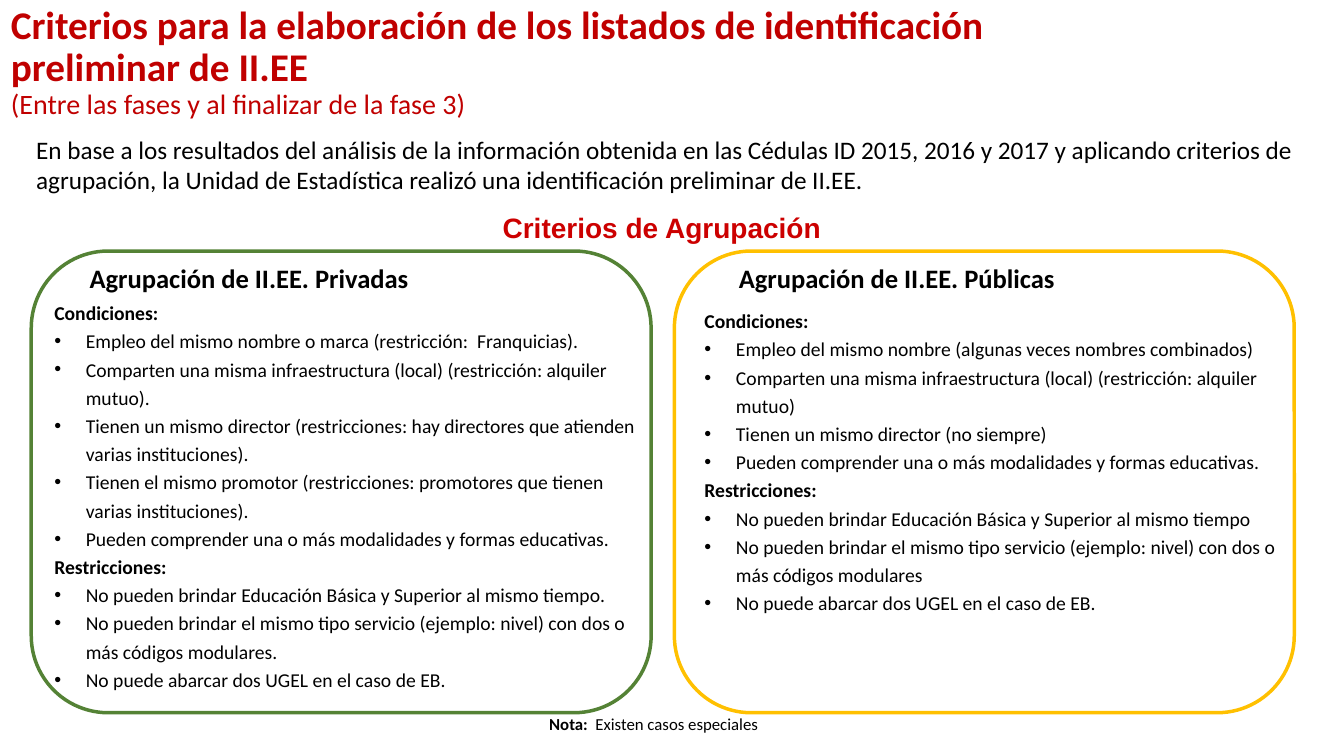
from lxml.etree import SubElement
from pptx import Presentation
from pptx.dml.color import RGBColor
from pptx.enum.shapes import MSO_SHAPE as Preset
from pptx.enum.text import MSO_ANCHOR as Anchor, MSO_AUTO_SIZE as AutoSize, PP_ALIGN as Align
from pptx.oxml.ns import qn
from pptx.util import Pt

PRIVATE_CONDITIONS = [
    "Empleo del mismo nombre o marca (restricción:  Franquicias).",
    "Comparten una misma infraestructura (local) (restricción: alquiler mutuo).",
    "Tienen un mismo director (restricciones: hay directores que atienden varias instituciones).",
    "Tienen el mismo promotor (restricciones: promotores que tienen varias instituciones).",
    "Pueden comprender una o más modalidades y formas educativas.",
]
PRIVATE_LIMITS = [
    "No pueden brindar Educación Básica y Superior al mismo tiempo.",
    "No pueden brindar el mismo tipo servicio (ejemplo: nivel) con dos o más códigos modulares.",
    "No puede abarcar dos UGEL en el caso de EB.",
]
PUBLIC_CONDITIONS = [
    "Empleo del mismo nombre (algunas veces nombres combinados)",
    "Comparten una misma infraestructura (local) (restricción: alquiler mutuo)",
    "Tienen un mismo director (no siempre)",
    "Pueden comprender una o más modalidades y formas educativas.",
]
PUBLIC_LIMITS = [
    "No pueden brindar Educación Básica y Superior al mismo tiempo",
    "No pueden brindar el mismo tipo servicio (ejemplo: nivel) con dos o más códigos modulares",
    "No puede abarcar dos UGEL en el caso de EB.",
]


def rgb(value):
    return RGBColor.from_string(value)


def style(font, size, color="000000", bold=False, name="Calibri"):
    font.name, font.size, font.bold = name, Pt(size), bold
    font.color.rgb = rgb(color)


def add_frame(slide, box, anchor=Anchor.TOP):
    frame = slide.shapes.add_textbox(*map(Pt, box)).text_frame
    frame.word_wrap = True
    frame.vertical_anchor = anchor
    return frame


def add_line(frame, index, text, spacing=1.0):
    line = frame.add_paragraph() if index else frame.paragraphs[0]
    line.text = text
    line.line_spacing = spacing
    return line


def add_bullet(line, indent=22.5):
    properties = line._p.get_or_add_pPr()
    properties.set("marL", str(Pt(indent)))
    properties.set("indent", str(-Pt(indent)))
    SubElement(properties, qn("a:buFont"), typeface="Arial")
    SubElement(properties, qn("a:buChar"), char="•")


def add_header(slide, box):
    header = add_frame(slide, box, Anchor.MIDDLE)
    lines = [
        ("Criterios para la elaboración de los listados de identificación", 28, True),
        ("preliminar de II.EE", 28, True),
        ("(Entre las fases y al finalizar de la fase 3)", 20, False),
    ]
    for index, (text, size, bold) in enumerate(lines):
        style(add_line(header, index, text, 0.9).font, size, "C00000", bold)


def add_intro(slide, box):
    intro = add_line(
        add_frame(slide, box), 0,
        "En base a los resultados del análisis de la información obtenida en las "
        "Cédulas ID 2015, 2016 y 2017 y aplicando criterios de agrupación, la Unidad "
        "de Estadística realizó una identificación preliminar de II.EE.")
    style(intro.font, 18)


def place_title(slide, box):
    title = slide.shapes.title
    title.left, title.top, title.width, title.height = map(Pt, box)
    frame = title.text_frame
    frame.auto_size = AutoSize.NONE
    frame.vertical_anchor = Anchor.MIDDLE
    heading = add_line(frame, 0, "Criterios de Agrupación ", 0.9)
    heading.alignment = Align.CENTER
    style(heading.font, 20, "CC0000", True, "Arial")


def add_panel(slide, box, color, heading, heading_inset, criteria_inset, conditions, limits):
    left, top, width, height = box
    outline = slide.shapes.add_shape(Preset.ROUNDED_RECTANGLE, *map(Pt, box))
    outline.shadow.inherit = False
    outline.fill.background()
    outline.line.color.rgb = rgb(color)
    outline.line.width = Pt(2.5)

    caption = add_frame(slide, (left + heading_inset, top, width - heading_inset, 34), Anchor.BOTTOM)
    style(add_line(caption, 0, heading).font, 19, bold=True)

    inset_x, inset_y = criteria_inset
    criteria = add_frame(slide, (left + inset_x, top + inset_y, 430, height - inset_y))
    groups = [("Condiciones:", conditions), ("Restricciones:", limits)]
    entries = [(text, text == label) for label, items in groups for text in [label, *items]]
    for index, (text, is_label) in enumerate(entries):
        line = add_line(criteria, index, text, 1.2)
        if not is_label:
            add_bullet(line)
        style(line.font, 14, bold=is_label)


def add_note(slide, box):
    note = add_frame(slide, box).paragraphs[0]
    for text, bold in [("Nota:", True), ("  Existen casos especiales", False)]:
        run = note.add_run()
        run.text = text
        style(run.font, 12, bold=bold)


def main():
    deck = Presentation()
    deck.slide_width, deck.slide_height = Pt(960), Pt(540)
    slide = deck.slides.add_slide(deck.slide_layouts[5])
    add_header(slide, (0.7, 0, 960, 90))
    add_intro(slide, (18.7, 92.2, 923, 51))
    place_title(slide, (61.2, 149, 828.7, 30.2))
    panel_top, panel_width, panel_height = 179.3, 442.8, 329.8
    add_panel(slide, (22.3, panel_top, panel_width, panel_height), "548235",
              "Agrupación de II.EE. Privadas", 34.6, (9.4, 28.8),
              PRIVATE_CONDITIONS, PRIVATE_LIMITS)
    add_panel(slide, (481.7, panel_top, panel_width, panel_height), "FFC000",
              "Agrupación de II.EE. Públicas", 38.9, (14.4, 34.6),
              PUBLIC_CONDITIONS, PUBLIC_LIMITS)
    add_note(slide, (385.2, 506.2, 207.4, 21.6))
    deck.save("out.pptx")


if __name__ == "__main__":
    main()
